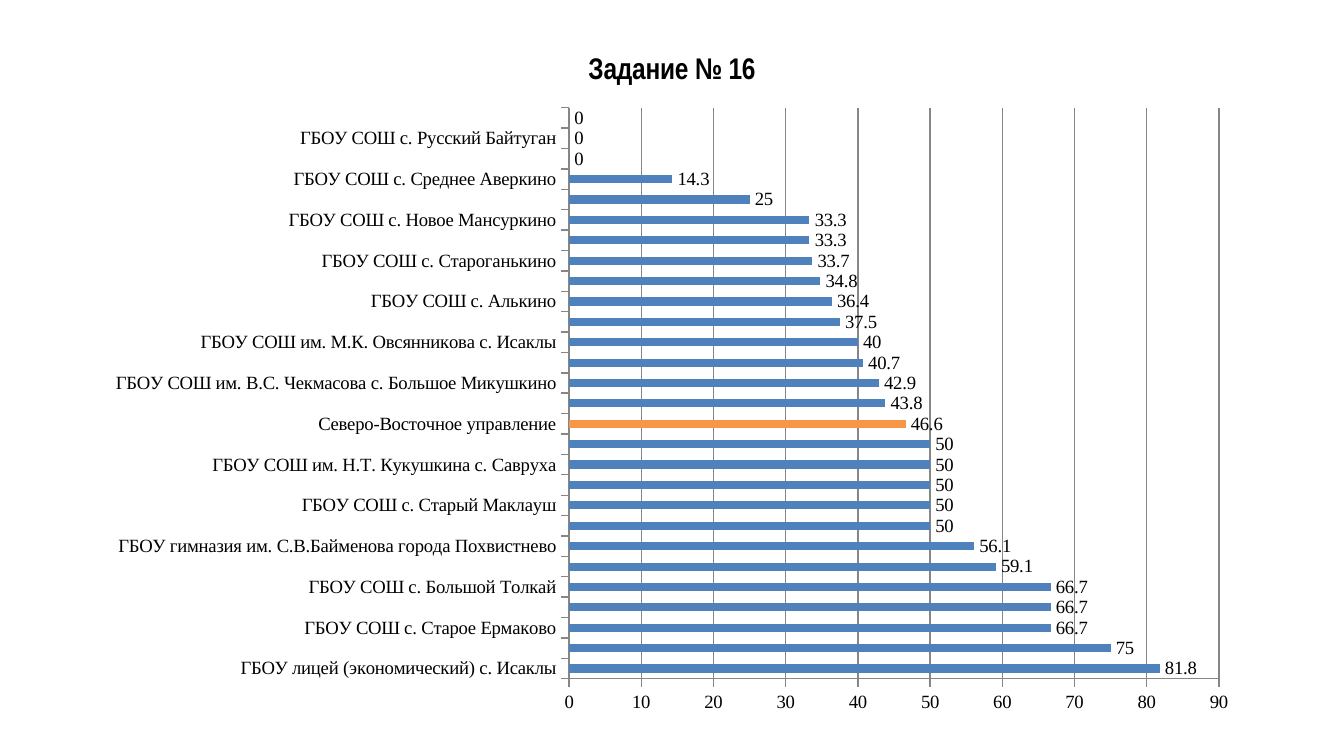
from pptx import Presentation
from pptx.chart.data import CategoryChartData as ChartData
from pptx.dml.color import RGBColor as RGB
from pptx.enum.chart import XL_CHART_TYPE as Kind
from pptx.enum.chart import XL_LABEL_POSITION as LabelPos
from pptx.enum.chart import XL_TICK_MARK as Tick
from pptx.util import Inches, Pt

COLORS = {"text": "000000", "bar": "4F81BD", "mark": "F79646", "line": "868686"}
WIDTH = 10
TITLE = "Задание № 16"
REGION = "Северо-Восточное управление"
SCORES = [
    ("ГБОУ лицей (экономический) с. Исаклы", 81.8),
    ("ГБОУ СОШ пос.Октябрьский г.о.Похвистнево", 75),
    ("ГБОУ СОШ с. Старое Ермаково", 66.7),
    ("ГБОУ СОШ с. Черный Ключ", 66.7),
    ("ГБОУ СОШ с. Большой Толкай", 66.7),
    ("ГБОУ СОШ № 1 города Похвистнево", 59.1),
    ("ГБОУ гимназия им. С.В.Байменова города Похвистнево", 56.1),
    ("ГБОУ СОШ с. Новое Якушкино", 50),
    ("ГБОУ СОШ с. Старый Маклауш", 50),
    ("ГБОУ СОШ им. Ф.Н. Ижедерова с. Рысайкино", 50),
    ("ГБОУ СОШ им. Н.Т. Кукушкина с. Савруха", 50),
    ("ГБОУ СОШ им. А.М. Шулайкина с. Старый Аманак", 50),
    (REGION, 46.6),
    ("ГБОУ СОШ с. Камышла", 43.8),
    ("ГБОУ СОШ им. В.С. Чекмасова с. Большое Микушкино", 42.9),
    ("ГБОУ СОШ № 3 города Похвистнево", 40.7),
    ("ГБОУ СОШ им. М.К. Овсянникова с. Исаклы", 40),
    ("ГБОУ СОШ им. Н.С. Доровского с. Подбельск", 37.5),
    ("ГБОУ СОШ с. Алькино", 36.4),
    ("ГБОУ СОШ № 2 им. В. Маскина ж.-д.ст. Клявлино", 34.8),
    ("ГБОУ СОШ с. Староганькино", 33.7),
    ("ГБОУ СОШ с. Новое Ганькино", 33.3),
    ("ГБОУ СОШ с. Новое Мансуркино", 33.3),
    ("ГБОУ СОШ им. П.В. Кравцова с. Старопохвистнево", 25),
    ("ГБОУ СОШ с. Среднее Аверкино", 14.3),
    ("ГБОУ СОШ пос. Сокский", 0),
    ("ГБОУ СОШ с. Русский Байтуган", 0),
    ("ГБОУ СОШ с. Борискино-Игар", 0),
]


def color(name):
    return RGB.from_string(COLORS[name])


def set_font(font, name, size, bold=False):
    font.name, font.size, font.bold = name, Pt(size), bold
    font.color.rgb = color("text")


def set_line(line):
    line.color.rgb = color("line")
    line.width = Pt(0.75)


def add_scores(slide, box):
    data = ChartData()
    names, vals = zip(*SCORES)
    data.categories = names
    data.add_series(TITLE, vals)
    chart = slide.shapes.add_chart(Kind.BAR_CLUSTERED, *box, data).chart
    set_font(chart.font, "Times New Roman", 10)
    chart.has_legend = False

    # Title
    chart.has_title = True
    frame = chart.chart_title.text_frame
    frame.text = TITLE
    set_font(frame.paragraphs[0].runs[0].font, "Arial Narrow", 16, True)
    chart.chart_title.include_in_layout = False

    # Axes
    for axis in (chart.category_axis, chart.value_axis):
        axis.major_tick_mark = Tick.OUTSIDE
        axis.minor_tick_mark = Tick.NONE
        set_line(axis.format.line)
    scale = chart.value_axis
    scale.has_major_gridlines = True
    set_line(scale.major_gridlines.format.line)

    # Bars, with the regional mean marked
    plot = chart.plots[0]
    plot.gap_width = 150
    plot.vary_by_categories = False
    bars = plot.series[0]
    mean = bars.points[names.index(REGION)]
    for part, name in ((bars, "bar"), (mean, "mark")):
        part.format.fill.solid()
        part.format.fill.fore_color.rgb = color(name)

    # Value labels
    labels = bars.data_labels
    labels.show_value = True
    labels.position = LabelPos.OUTSIDE_END
    set_font(labels.font, "Times New Roman", 10)


def main():
    deck = Presentation()
    deck.slide_width = Inches(WIDTH)
    deck.slide_height = Inches(WIDTH * 9 / 16)
    slide = deck.slides.add_slide(deck.slide_layouts[6])
    add_scores(slide, [Inches(n) for n in (0.69, 0.21, 8.62, 5.2)])
    deck.save("out.pptx")


if __name__ == "__main__":
    main()
